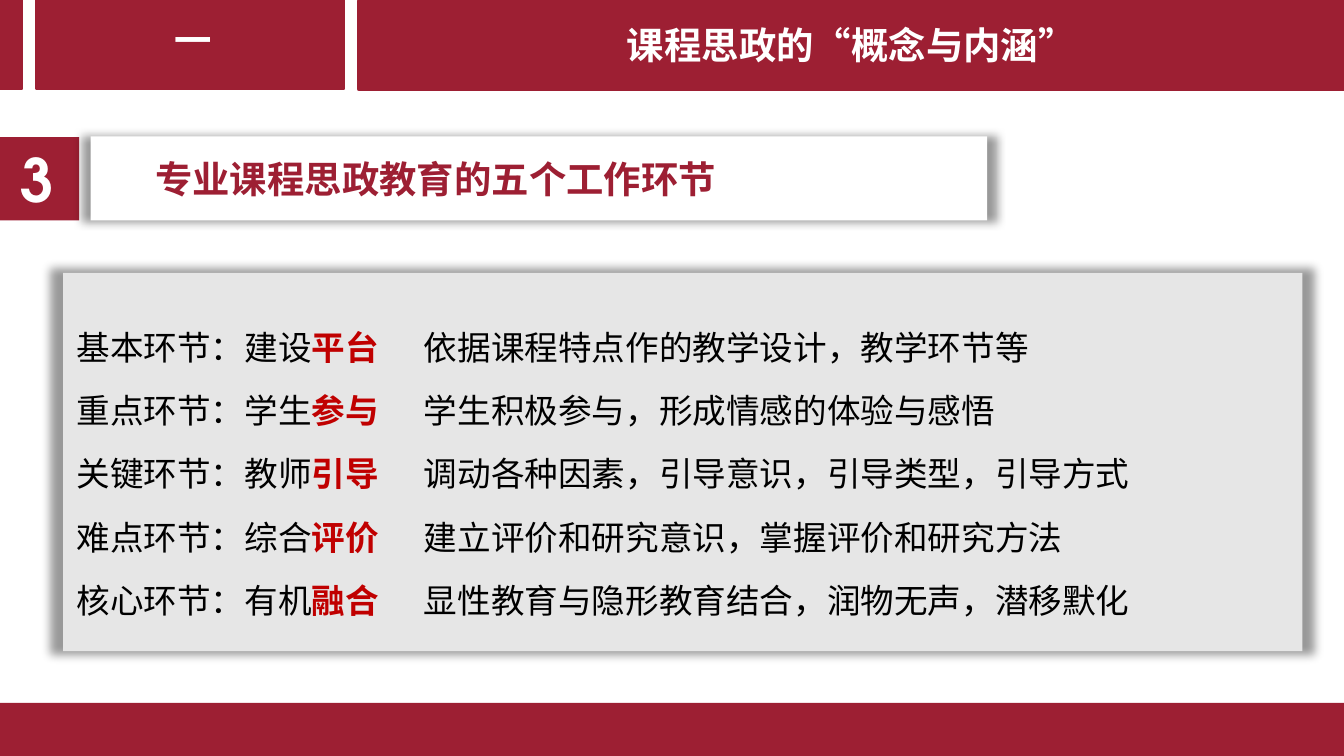
from typing import NamedTuple

from lxml.etree import SubElement
from pptx import Presentation
from pptx.dml.color import RGBColor
from pptx.enum.shapes import MSO_SHAPE as Shape
from pptx.enum.text import MSO_ANCHOR as Anchor, MSO_AUTO_SIZE as Fit, PP_ALIGN as Align
from pptx.oxml.ns import qn
from pptx.util import Pt

PX = 4572
SLIDE_W, SLIDE_H = 2000, 1125
COLORS = {
    "wine": "9D1F33",
    "white": "FFFFFF",
    "panel": "E6E6E6",
    "text": "000000",
    "accent": "C00000",
}
CJK = "Noto Sans CJK SC"
DIGIT = "TeX Gyre Adventor"
COLUMN_TAB = 517


class Box(NamedTuple):
    x: int
    y: int
    w: int
    h: int


class Block(NamedTuple):
    box: Box
    fill: str
    outlined: bool = False
    shadow: bool = False


class Label(NamedTuple):
    text: str
    size: int
    color: str
    font: str = CJK
    align: Align = Align.CENTER
    indent: int = 20


class Step(NamedTuple):
    stage: str
    keyword: str
    detail: str


FOOTER = Block(Box(0, 1046, 2010, 79), "wine")
NUMBER = Block(Box(-8, 204, 126, 124), "wine")
HEADING = Block(Box(135, 203, 1334, 125), "white", shadow=True)
PANEL = Block(Box(94, 406, 1844, 563), "panel", shadow=True)
TABS = [Block(Box(x, 0, w, 132), "wine", outlined=True) for x, w in ((0, 32), (55, 456))]
TITLE = Block(Box(534, 1, 1466, 132), "wine", outlined=True)
SECTION = Box(240, 16, 96, 88)

STEPS = [
    Step("基本环节：建设", "平台", "依据课程特点作的教学设计，教学环节等"),
    Step("重点环节：学生", "参与", "学生积极参与，形成情感的体验与感悟"),
    Step("关键环节：教师", "引导", "调动各种因素，引导意识，引导类型，引导方式"),
    Step("难点环节：综合", "评价", "建立评价和研究意识，掌握评价和研究方法"),
    Step("核心环节：有机", "融合", "显性教育与隐形教育结合，润物无声，潜移默化"),
]


def rgb(name: str) -> RGBColor:
    return RGBColor.from_string(COLORS[name])


def emu(box: Box) -> list[int]:
    return [v * PX for v in box]


def format_run(r, size: int, color: str, font: str = CJK, bold: bool = True) -> None:
    r.font.size, r.font.bold, r.font.name = Pt(size), bold, font
    r.font.color.rgb = rgb(color)
    SubElement(r.font._element, qn("a:ea"), typeface=font)


def add_glow(sp) -> None:
    effects = sp._element.spPr.find(qn("a:effectLst"))
    shadow = SubElement(effects, qn("a:outerShdw"), blurRad=str(Pt(5)), sx="102000",
                        sy="102000", algn="ctr", rotWithShape="0")
    color = SubElement(shadow, qn("a:srgbClr"), val=COLORS["text"])
    SubElement(color, qn("a:alpha"), val="40000")


def paint(sp, block: Block) -> None:
    sp.fill.solid()
    sp.fill.fore_color.rgb = rgb(block.fill)
    if block.outlined:
        sp.line.color.rgb = rgb(block.fill)
        sp.line.width = Pt(2)
    else:
        sp.line.fill.background()


def add_block(s, block: Block):
    sp = s.shapes.add_shape(Shape.RECTANGLE, *emu(block.box))
    sp.shadow.inherit = False
    paint(sp, block)
    if block.shadow:
        add_glow(sp)
    return sp


def write(sp, label: Label) -> None:
    tf = sp.text_frame
    tf.text = label.text
    tf.vertical_anchor = Anchor.MIDDLE
    tf.margin_left = label.indent * PX
    p = tf.paragraphs[0]
    p.alignment = label.align
    format_run(p.runs[0], label.size, label.color, label.font)


def set_title(s, block: Block, label: Label) -> None:
    sp = s.shapes.title
    sp.left, sp.top, sp.width, sp.height = emu(block.box)
    paint(sp, block)
    write(sp, label)
    sp.text_frame.auto_size = Fit.NONE


def add_section(s, box: Box, label: Label) -> None:
    sp = s.shapes.add_textbox(*emu(box))
    write(sp, label)
    tf = sp.text_frame
    tf.vertical_anchor = Anchor.TOP
    tf.word_wrap = False
    tf.auto_size = Fit.SHAPE_TO_FIT_TEXT


def write_steps(sp, steps: list[Step]) -> None:
    tf = sp.text_frame
    tf.vertical_anchor = Anchor.MIDDLE
    for i, step in enumerate(steps):
        p = tf.add_paragraph() if i else tf.paragraphs[0]
        p.alignment = Align.LEFT
        p.line_spacing = Pt(34)
        tabs = SubElement(p._p.get_or_add_pPr(), qn("a:tabLst"))
        SubElement(tabs, qn("a:tab"), pos=str(COLUMN_TAB * PX), algn="l")
        p.text = step.stage
        format_run(p.runs[0], 18, "text", bold=False)
        for text, color, bold in ((step.keyword, "accent", True),
                                  ("\t" + step.detail, "text", False)):
            r = p.add_run()
            r.text = text
            format_run(r, 18, color, bold=bold)


def main() -> None:
    prs = Presentation()
    prs.slide_width, prs.slide_height = SLIDE_W * PX, SLIDE_H * PX
    s = prs.slides.add_slide(prs.slide_layouts[5])

    set_title(s, TITLE, Label("课程思政的“概念与内涵”", 20, "white"))
    add_block(s, FOOTER)
    write(add_block(s, NUMBER), Label("3", 32, "white", DIGIT))
    write(add_block(s, HEADING),
          Label("专业课程思政教育的五个工作环节", 20, "wine", align=Align.LEFT, indent=96))
    write_steps(add_block(s, PANEL), STEPS)
    for tab in TABS:
        add_block(s, tab)
    add_section(s, SECTION, Label("一", 20, "white", align=Align.JUSTIFY))

    prs.save("out.pptx")


if __name__ == "__main__":
    main()
